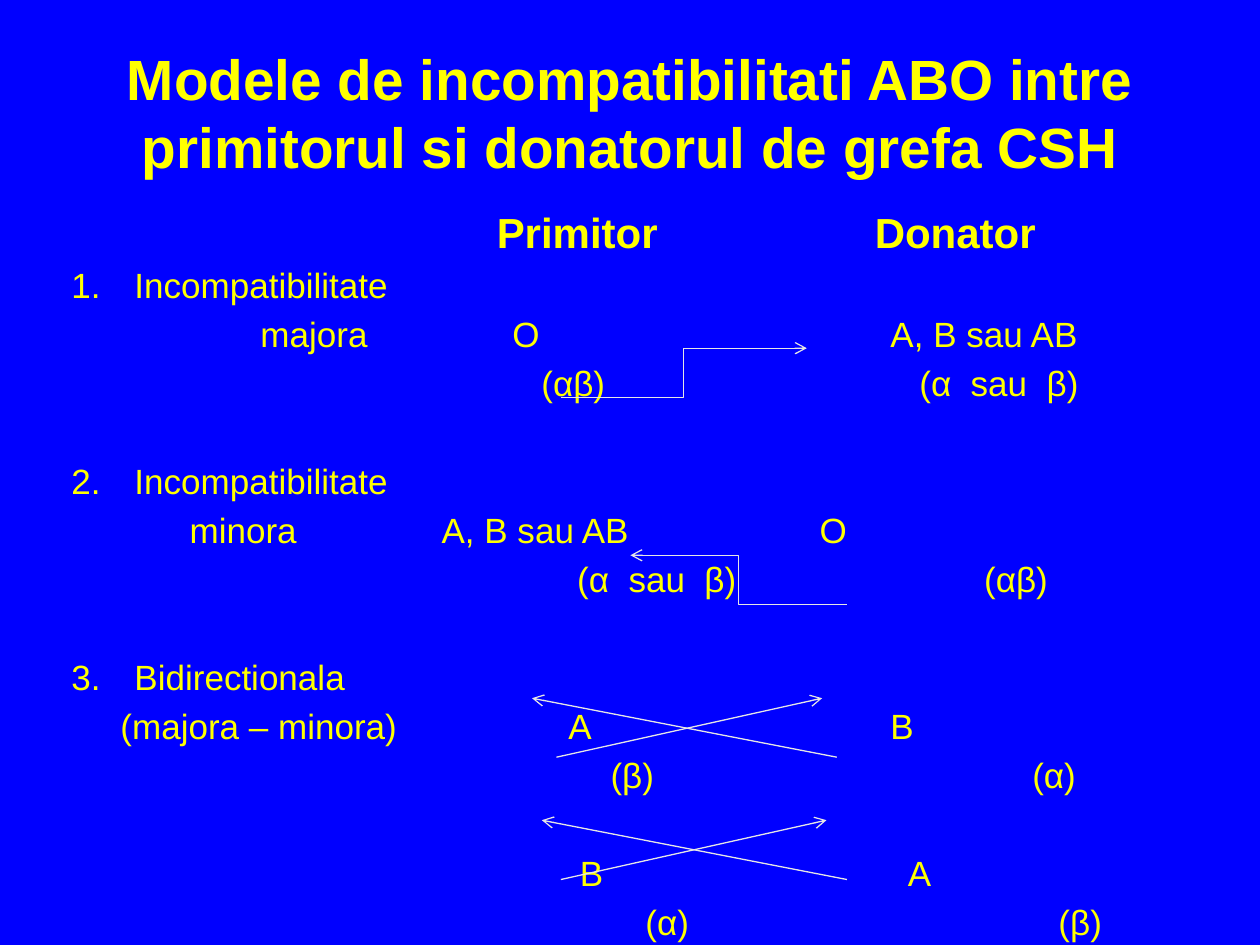
from lxml import etree
from pptx import Presentation
from pptx.dml.color import RGBColor
from pptx.enum.shapes import MSO_CONNECTOR
from pptx.enum.text import MSO_ANCHOR, PP_ALIGN
from pptx.oxml.ns import qn
from pptx.util import Pt

ELBOW, LINE = MSO_CONNECTOR.ELBOW, MSO_CONNECTOR.STRAIGHT
MIDDLE, TOP = MSO_ANCHOR.MIDDLE, MSO_ANCHOR.TOP
CENTER, LEFT = PP_ALIGN.CENTER, PP_ALIGN.LEFT
BLUE, YELLOW, GREY = "0000FF", "FFFF00", "E6E6E6"


def color(code):
    return RGBColor.from_string(code)


def write(par, text, size=20, bold=False, align=LEFT, before=3.9, num=None, tabs=()):
    """Fill a paragraph; num gives it a list number, tabs are stops in points."""
    par.alignment = align
    par.space_before = Pt(before)
    run = par.add_run()
    run.text = text
    font = run.font
    font.name, font.size, font.bold = "Arial", Pt(size), bold
    font.color.rgb = color(YELLOW)
    props = par._p.get_or_add_pPr()
    if num:
        props.set("marL", str(Pt(36)))
        props.set("indent", str(-Pt(36)))
        etree.SubElement(props, qn("a:buAutoNum"), type="arabicPeriod", startAt=str(num))
    if tabs:
        stops = etree.SubElement(props, qn("a:tabLst"))
        for pos in tabs:
            etree.SubElement(stops, qn("a:tab"), pos=str(Pt(pos)), algn="l")


prs = Presentation()
prs.slide_width, prs.slide_height = Pt(720), Pt(540)
slide = prs.slides.add_slide(prs.slide_layouts[6])
fill = slide.background.fill
fill.solid()
fill.fore_color.rgb = color(BLUE)

# Title and body frames
frames = []
for box, anchor in (((36, 18.7, 648, 90), MIDDLE), ((33.8, 114.5, 652.3, 433.4), TOP)):
    frame = slide.shapes.add_textbox(*map(Pt, box)).text_frame
    frame.word_wrap = True
    frame.vertical_anchor = anchor
    frames.append(frame)
title, body = frames

head = title.paragraphs[0]
write(head, "Modele de incompatibilitati ABO intre primitorul si donatorul de grefa CSH",
      size=32.4, bold=True, align=CENTER, before=0)
head.line_spacing = Pt(39)

# Body rows: text and format; a wide space before opens each group
GAP = 32.1
rows = [
    ("\tPrimitor\tDonator", dict(size=24, bold=True, before=3.5, tabs=(243, 459))),
    ("Incompatibilitate", dict(num=1)),
    ("\tmajora\tO\tA, B sau AB", dict(tabs=(108, 252, 468))),
    ("\t(αβ)\t(α  sau  β)", dict(tabs=(268.5, 484.5))),
    ("Incompatibilitate", dict(num=2, before=GAP)),
    ("\tminora\tA, B sau AB\tO", dict(tabs=(67.5, 211.5, 427.5))),
    ("\t(α  sau  β)\t(αβ)", dict(tabs=(289, 521.5))),
    ("Bidirectionala", dict(num=3, before=GAP)),
    ("\t(majora – minora)\tA\tB", dict(tabs=(28, 284, 468))),
    ("\t(β)\t(α)", dict(tabs=(308, 549))),
    ("\tB\tA", dict(before=GAP, tabs=(290.5, 478))),
    ("\t(α)\t(β)", dict(tabs=(328, 564))),
]
for i, (text, form) in enumerate(rows):
    par = body.add_paragraph() if i else body.paragraphs[0]
    write(par, text, **form)

# Arrows: kind, start and end
arrows = [
    (ELBOW, 320.5, 227.2, 461, 199),
    (ELBOW, 484, 345.5, 360.3, 317.3),
    (LINE, 318, 432.7, 469.8, 399),
    (LINE, 478.2, 432.7, 304, 399),
    (LINE, 484, 502.6, 309.6, 468.7),
    (LINE, 320.5, 502.6, 472.3, 468.7),
]
for kind, *ends in arrows:
    arrow = slide.shapes.add_connector(kind, *map(Pt, ends))
    arrow.line.color.rgb = color(GREY)
    arrow.line.width = Pt(0.75)
    etree.SubElement(arrow.line._get_or_add_ln(), qn("a:tailEnd"), type="arrow")
    etree.SubElement(arrow._element.spPr, qn("a:effectLst"))

prs.save("out.pptx")
